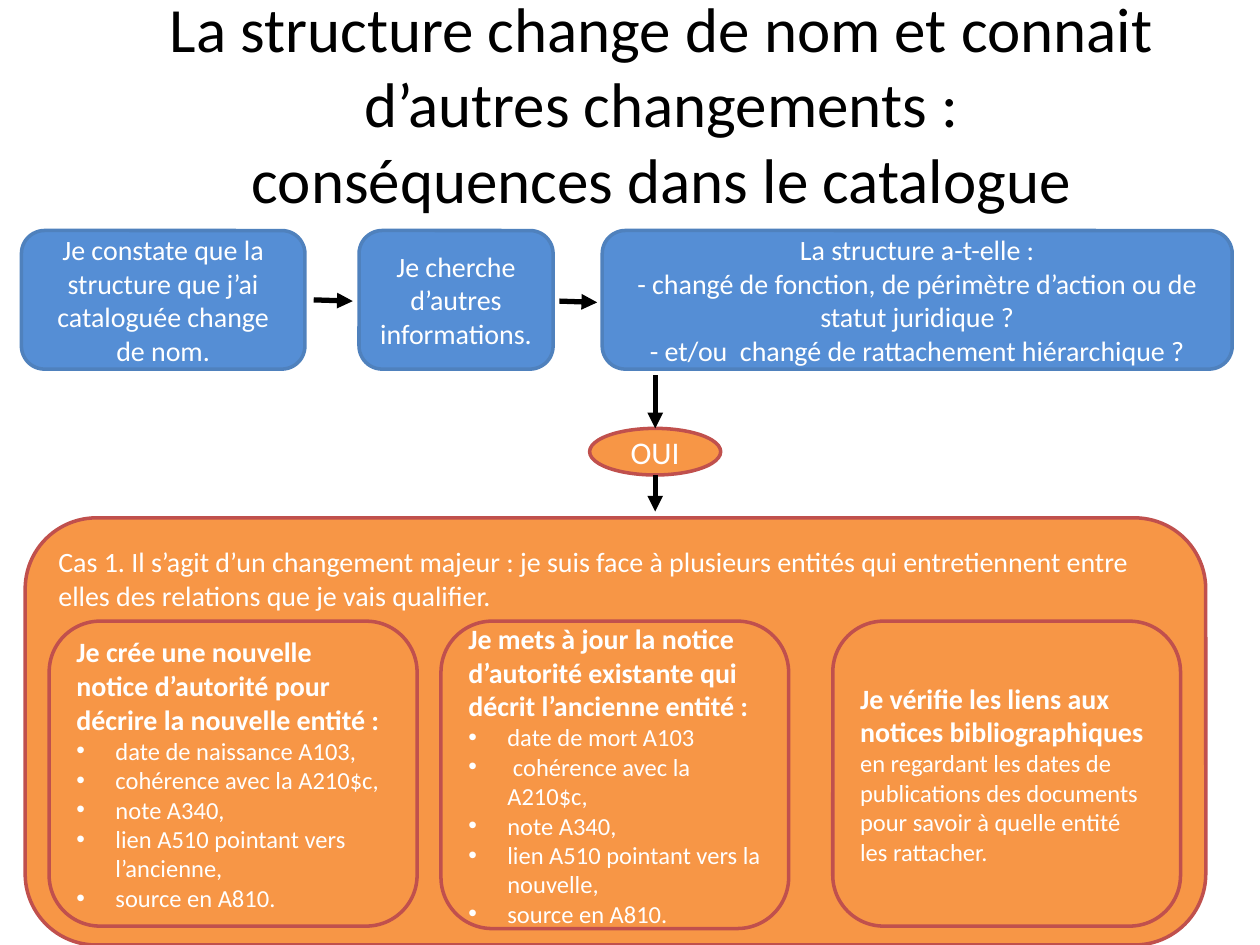
"""Build the flow slide on name changes and their consequences in the catalogue."""
from lxml import etree
from pptx import Presentation
from pptx.dml.color import RGBColor
from pptx.enum.shapes import MSO_CONNECTOR, MSO_SHAPE
from pptx.enum.text import MSO_ANCHOR, PP_ALIGN
from pptx.oxml.ns import qn
from pptx.util import Inches, Pt

ROUNDED, OVAL = MSO_SHAPE.ROUNDED_RECTANGLE, MSO_SHAPE.OVAL
STRAIGHT = MSO_CONNECTOR.STRAIGHT
TOP, MIDDLE = MSO_ANCHOR.TOP, MSO_ANCHOR.MIDDLE
LEFT, CENTER = PP_ALIGN.LEFT, PP_ALIGN.CENTER

THEME = {
    "font": "Calibri",
    "title": 36, "answer": 18, "body": 16, "detail": 14,
    "black": RGBColor.from_string("000000"),
    "white": RGBColor.from_string("FFFFFF"),
    "step": (RGBColor.from_string("558ED5"), RGBColor.from_string("4F81BD")),
    "case": (RGBColor.from_string("F79646"), RGBColor.from_string("C0504D")),
    "outline": Pt(2), "arrow": Pt(3), "indent": Inches(0.31),
}

presentation = Presentation()
presentation.slide_width, presentation.slide_height = Inches(10), Inches(7.5)
slide = presentation.slides.add_slide(presentation.slide_layouts[6])
COLUMN = presentation.slide_width / 100
ROW = presentation.slide_height / 75


def add_text(frame, text, size="body", color="white", bold=False, align=LEFT, bullet=False):
    paragraph = frame.add_paragraph() if frame.text else frame.paragraphs[0]
    paragraph.text = text
    paragraph.alignment = align
    for run in paragraph.runs:
        run.font.name = THEME["font"]
        run.font.size = Pt(THEME[size])
        run.font.bold = bold
        run.font.color.rgb = THEME[color]
    if bullet:
        properties = paragraph._p.get_or_add_pPr()
        properties.set("marL", str(THEME["indent"]))
        properties.set("indent", str(-THEME["indent"]))
        etree.SubElement(properties, qn("a:buFont")).set("typeface", "Arial")
        etree.SubElement(properties, qn("a:buChar")).set("char", "•")


def add_box(kind, left, top, width, height, style, anchor=MIDDLE):
    shape = slide.shapes.add_shape(
        kind, round(left * COLUMN), round(top * ROW), round(width * COLUMN), round(height * ROW))
    shape.shadow.inherit = False
    shape.fill.solid()
    shape.fill.fore_color.rgb, shape.line.color.rgb = THEME[style]
    shape.line.width = THEME["outline"]
    shape.text_frame.word_wrap = True
    shape.text_frame.vertical_anchor = anchor
    return shape.text_frame


title = slide.shapes.add_textbox(
    round(5 * COLUMN), round(1.9 * ROW), round(95 * COLUMN), round(12.5 * ROW)).text_frame
title.word_wrap = True
title.vertical_anchor = MIDDLE
add_text(title, "La structure change de nom et connait d’autres changements :\n"
         "conséquences dans le catalogue", size="title", color="black", align=CENTER)

steps = [
    (1.7, 22.5, ["Je constate que la structure que j’ai cataloguée change de nom."]),
    (28.5, 15.4, ["Je cherche d’autres informations."]),
    (47.8, 50, ["La structure a-t-elle :",
                "- changé de fonction, de périmètre d’action ou de statut juridique ?",
                "- et/ou  changé de rattachement hiérarchique ?"]),
]
for left, width, lines in steps:
    step = add_box(ROUNDED, left, 18.3, width, 11, "step")
    for line in lines:
        add_text(step, line, align=CENTER)

answer = add_box(OVAL, 46.8, 34, 10.4, 3.7, "case")
add_text(answer, "OUI", size="answer", align=CENTER)

case = add_box(ROUNDED, 2, 41.1, 93.7, 33.9, "case", anchor=TOP)
add_text(case, "Cas 1. Il s’agit d’un changement majeur : je suis face à plusieurs entités "
         "qui entretiennent entre elles des relations que je vais qualifier.")

actions = [
    (3.9, 29.2, 24.2, "Je crée une nouvelle notice d’autorité pour décrire la nouvelle entité :", True,
     ["date de naissance A103,", "cohérence avec la A210$c,", "note A340,",
      "lien A510 pointant vers l’ancienne,", "source en A810."]),
    (35, 27.6, 24.4, "Je mets à jour la notice d’autorité existante qui décrit l’ancienne entité :", True,
     ["date de mort A103", " cohérence avec la A210$c,", "note A340,",
      "lien A510 pointant vers la nouvelle,", "source en A810."]),
    (66.1, 27.6, 24.2, "Je vérifie les liens aux notices bibliographiques", False,
     ["en regardant les dates de publications des documents pour savoir à quelle entité "
      "les rattacher."]),
]
for left, width, height, heading, bulleted, details in actions:
    action = add_box(ROUNDED, left, 49.3, width, height, "case")
    add_text(action, heading, bold=True)
    for detail in details:
        add_text(action, detail, size="detail", bullet=bulleted)

arrows = [
    (24.9, 23.8, 28, 23.9),
    (44.4, 23.9, 47.4, 24),
    (52, 29.8, 52, 34),
    (52, 37.7, 52, 40.6),
]
for start_column, start_row, end_column, end_row in arrows:
    arrow = slide.shapes.add_connector(
        STRAIGHT, round(start_column * COLUMN), round(start_row * ROW),
        round(end_column * COLUMN), round(end_row * ROW))
    arrow.line.color.rgb = THEME["black"]
    arrow.line.width = THEME["arrow"]
    etree.SubElement(arrow.line._get_or_add_ln(), qn("a:tailEnd")).set("type", "triangle")
    etree.SubElement(arrow._element.spPr, qn("a:effectLst"))

presentation.save("out.pptx")
